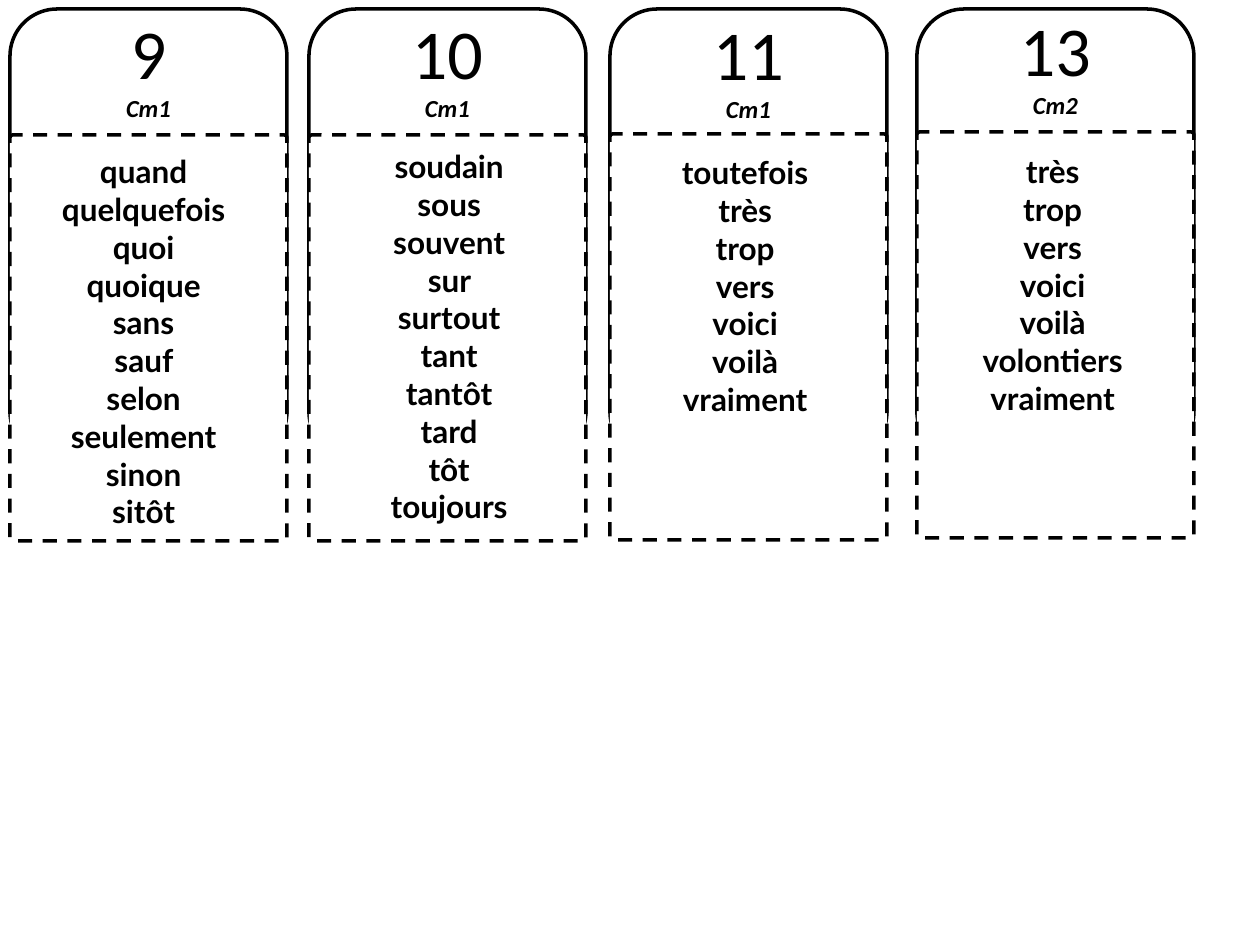
from pptx import Presentation
from pptx import util as u
from pptx.dml.color import RGBColor
from pptx.enum import dml, shapes, text

PX = u.Inches(1) // 126  # one px in EMU


def color(value):
    return RGBColor.from_string(value)


class Bookmarks:
    """Holds the style and the slide the bookmarks are drawn on."""
    ink, paper = "000000", "FFFFFF"
    number_font, word_font = "Calibri", "Lato"
    width = 277

    def __init__(self, slide):
        self.slide = slide

    def card(self, left, top, height, corner):
        card = self.slide.shapes.add_shape(
            shapes.MSO_SHAPE.ROUNDED_RECTANGLE,
            *(v * PX for v in (left, top, self.width, height)))
        card.adjustments[0] = corner
        card.shadow.inherit = False
        card.line.color.rgb = color(self.ink)
        card.line.width = u.Pt(2)
        return card

    def set_line(self, paragraph, words, font, size, bold=False, italic=False):
        paragraph.text = words
        paragraph.alignment = text.PP_ALIGN.CENTER
        style = paragraph.font
        style.name, style.size = font, u.Pt(size)
        style.bold, style.italic = bold, italic
        style.color.rgb = color(self.ink)

    def header(self, left, number, level, bottom_inset):
        card = self.card(left, 9, 450, 0.17)
        card.fill.background()
        frame = card.text_frame
        frame.vertical_anchor = text.MSO_ANCHOR.MIDDLE
        frame.margin_top, frame.margin_bottom = 0, bottom_inset * PX
        self.set_line(frame.paragraphs[0], number, self.number_font, 40)
        self.set_line(frame.add_paragraph(), level, self.number_font, 14, True, True)

    def panel(self, left, top):
        panel = self.card(left, top, 406, 0.01)
        panel.fill.solid()
        panel.fill.fore_color.rgb = color(self.paper)
        panel.line.dash_style = dml.MSO_LINE.DASH

    def word_list(self, left, top, width, height, words):
        box = self.slide.shapes.add_textbox(
            *(v * PX for v in (left, top, width, height)))
        frame = box.text_frame
        frame.word_wrap = True
        frame.auto_size = text.MSO_AUTO_SIZE.SHAPE_TO_FIT_TEXT
        for i, word in enumerate(words.split()):
            line = frame.add_paragraph() if i else frame.paragraphs[0]
            self.set_line(line, word + " ", self.word_font, 18, True)


# number, level, card left, panel top, header bottom inset, list box, words
BOOKMARKS = [
    ("9", "Cm1", 10, 135, 336, (40, 146, 215, 394),
     "quand quelquefois quoi quoique sans sauf selon seulement sinon sitôt"),
    ("10", "Cm1", 309, 135, 336, (330, 141, 246, 394),
     "soudain sous souvent sur surtout tant tantôt tard tôt toujours"),
    ("11", "Cm1", 610, 134, 334, (636, 147, 226, 280),
     "toutefois très trop vers voici voilà vraiment"),
    ("13", "Cm2", 917, 132, 342, (926, 146, 261, 280),
     "très trop vers voici voilà volontiers vraiment"),
]


def main():
    deck = Presentation()
    deck.slide_width, deck.slide_height = u.Inches(10), u.Inches(7.5)
    page = Bookmarks(deck.slides.add_slide(deck.slide_layouts[6]))

    # Rounded headers, each partly covered by its dashed panel
    for number, level, left, panel_top, inset, _, _ in BOOKMARKS:
        page.header(left, number, level, inset)
        page.panel(left, panel_top)

    # Word lists on top
    for *_, box, words in BOOKMARKS:
        page.word_list(*box, words)

    deck.save("out.pptx")


if __name__ == "__main__":
    main()
